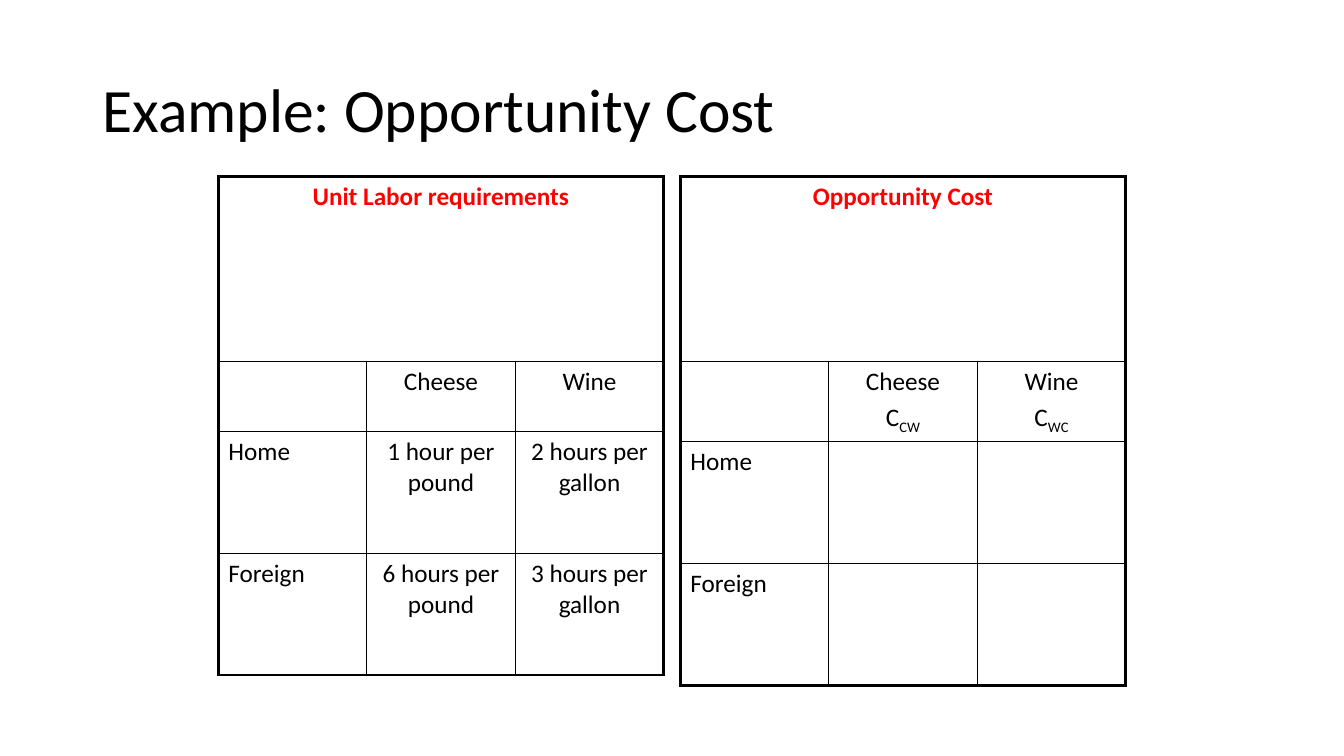
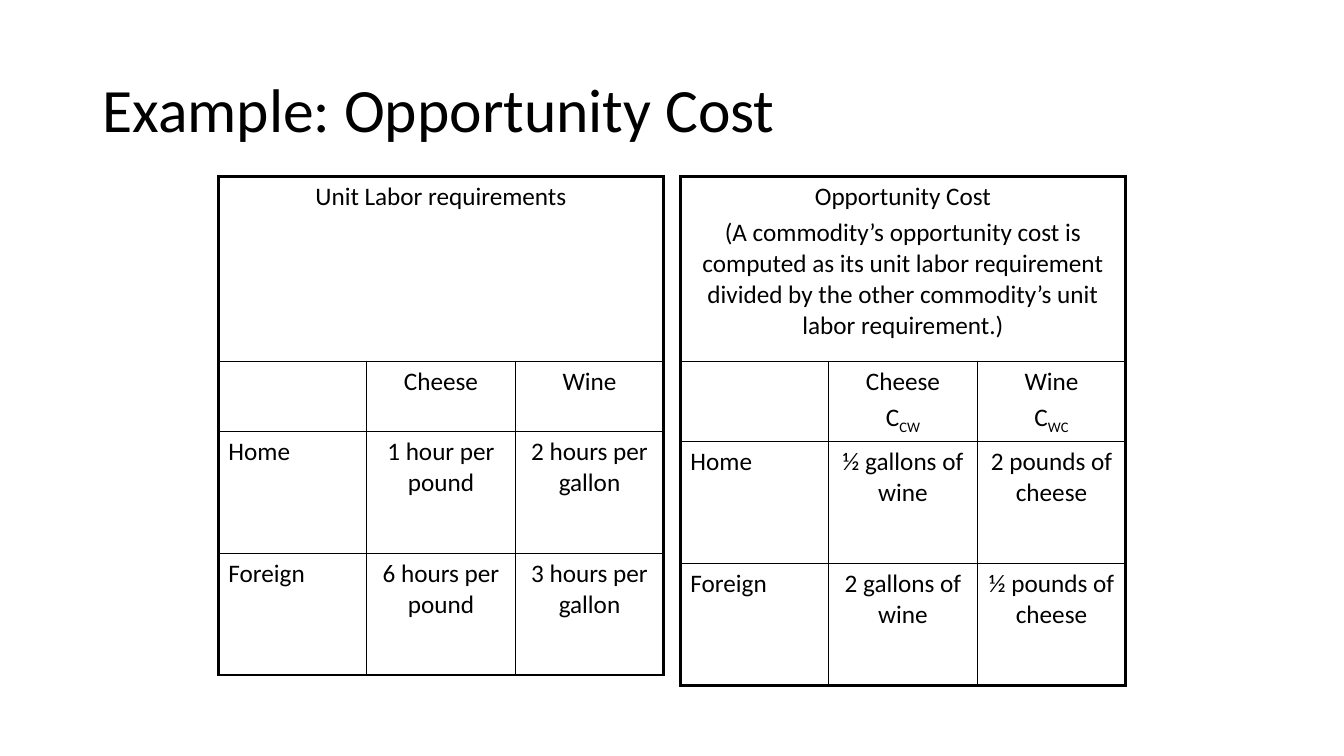
import pptx
import pptx.dml.color
import pptx.enum.text
import pptx.oxml
import pptx.oxml.ns
import pptx.util

PX = 9525  # EMU per px, 96 px to the inch
BLACK = pptx.dml.color.RGBColor(0x00, 0x00, 0x00)
RED = pptx.dml.color.RGBColor(0xFF, 0x00, 0x00)
FONT = "Calibri"
OUTER_LINE, INNER_LINE = 2.25, 1

TITLE = "Example: Opportunity Cost"
TITLE_BOX = (88, 38, 1104, 139)
TABLE_TOP = 168
LABOR_LEFT, COST_LEFT = 208, 648
COLUMN_WIDTHS = (141, 142, 141)
LABOR_ROWS = (176, 67, 116, 116)
COST_ROWS = (176, 73, 116, 116)

# In a cell, "\n" starts a paragraph and "_" starts a subscript.
LABOR = [
    ["Unit Labor requirements", "", ""],
    ["", "Cheese", "Wine"],
    ["Home", "1 hour per pound", "2 hours per gallon"],
    ["Foreign", "6 hours per pound", "3 hours per gallon"],
]
COST_HEADER = ["", "Cheese\nC_CW", "Wine\nC_WC"]
COST_QUESTION = [
    ["Opportunity Cost", "", ""],
    COST_HEADER,
    ["Home", "", ""],
    ["Foreign", "", ""],
]
COST_ANSWER = [
    ["Opportunity Cost\n(A commodity’s opportunity cost is computed as its unit labor "
     "requirement divided by the other commodity’s unit labor requirement.)", "", ""],
    COST_HEADER,
    ["Home", "½ gallons of wine", "2 pounds of cheese"],
    ["Foreign", "2 gallons of wine", "½ pounds of cheese"],
]


def set_borders(cell, widths):
    """Draw solid cell borders; widths maps L, R, T and B, in that order, to points."""
    properties = cell._tc.get_or_add_tcPr()
    for side, width in widths.items():
        properties.append(pptx.oxml.parse_xml(
            f'<a:ln{side} {pptx.oxml.ns.nsdecls("a")} w="{pptx.util.Pt(width)}">'
            f'<a:solidFill><a:srgbClr val="{BLACK}"/></a:solidFill></a:ln{side}>'))


def add_grid(slide, left, row_heights, rows, heading_color, heading_bold):
    """Add a table whose first row is one merged heading."""
    last_row, last_column = len(rows) - 1, len(COLUMN_WIDTHS) - 1
    table = slide.shapes.add_table(
        len(rows), len(COLUMN_WIDTHS), left * PX, TABLE_TOP * PX,
        sum(COLUMN_WIDTHS) * PX, sum(row_heights) * PX).table
    table.first_row = table.horz_banding = False
    for column, width in zip(table.columns, COLUMN_WIDTHS):
        column.width = width * PX
    for row, height in zip(table.rows, row_heights):
        row.height = height * PX
    table.cell(0, 0).merge(table.cell(0, last_column))

    for r, texts in enumerate(rows):
        for c, text in enumerate(texts):
            cell = table.cell(r, c)
            set_borders(cell, {
                "L": INNER_LINE if c else OUTER_LINE,
                "R": OUTER_LINE if c == last_column or r == 0 else INNER_LINE,
                "T": INNER_LINE if r else OUTER_LINE,
                "B": OUTER_LINE if r == last_row else INNER_LINE,
            })
            cell.fill.background()
            if not text:
                continue
            for index, line in enumerate(text.split("\n")):
                frame = cell.text_frame
                para = frame.add_paragraph() if index else frame.paragraphs[0]
                para.space_before = pptx.util.Pt(4)
                if r == 0 or c > 0:
                    para.alignment = pptx.enum.text.PP_ALIGN.CENTER
                para.font.name = FONT
                para.font.size = pptx.util.Pt(18)
                para.font.bold = heading_bold and r == 0
                para.font.color.rgb = BLACK if r else heading_color
                base, _, subscript = line.partition("_")
                para.add_run().text = base
                if subscript:
                    span = para.add_run()
                    span.text = subscript
                    span._r.get_or_add_rPr().set("baseline", "-25000")


deck = pptx.Presentation()
deck.slide_width, deck.slide_height = 1280 * PX, 720 * PX
title_only = deck.slide_layouts.get_by_name("Title Only")

for cost_rows, heading_color, heading_bold in (
        (COST_QUESTION, RED, True), (COST_ANSWER, BLACK, False)):
    slide = deck.slides.add_slide(title_only)
    title = slide.shapes.title
    title.left, title.top, title.width, title.height = (n * PX for n in TITLE_BOX)
    title.text_frame.text = TITLE
    title.text_frame.vertical_anchor = pptx.enum.text.MSO_ANCHOR.MIDDLE
    para = title.text_frame.paragraphs[0]
    para.alignment = pptx.enum.text.PP_ALIGN.LEFT
    para.line_spacing = 0.9
    para.font.name = FONT
    para.font.size = pptx.util.Pt(44)
    para.font.color.rgb = BLACK

    add_grid(slide, LABOR_LEFT, LABOR_ROWS, LABOR, heading_color, heading_bold)
    add_grid(slide, COST_LEFT, COST_ROWS, cost_rows, heading_color, heading_bold)

deck.save("out.pptx")
